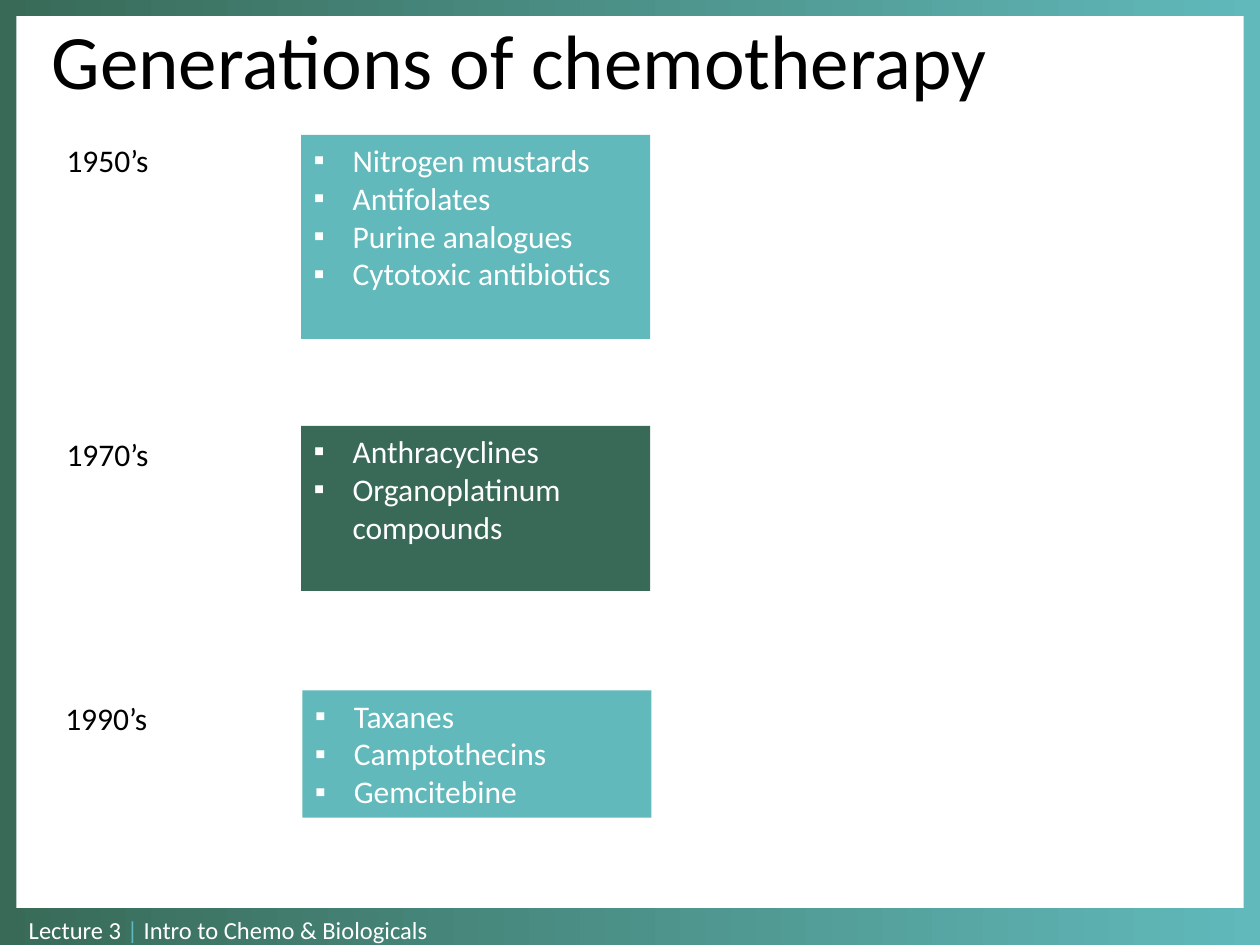
from lxml.etree import SubElement
from pptx import Presentation
from pptx.dml.color import RGBColor
from pptx.enum.shapes import MSO_SHAPE
from pptx.enum.text import MSO_ANCHOR, MSO_AUTO_SIZE, PP_ALIGN
from pptx.oxml.ns import qn
from pptx.util import Inches, Pt

GREEN = RGBColor(0x38, 0x6A, 0x57)
TEAL = RGBColor(0x61, 0xB9, 0xBB)
WHITE = RGBColor(0xFF, 0xFF, 0xFF)
BLACK = RGBColor(0x00, 0x00, 0x00)


def add_rect(left, top, width, height, color=None):
    """Add a borderless rectangle; without a color it fades from green to teal."""
    rect = s.shapes.add_shape(MSO_SHAPE.RECTANGLE, Inches(left), Inches(top),
                              Inches(width), Inches(height))
    rect.shadow.inherit = False
    rect.line.fill.background()
    if color is None:
        rect.fill.gradient()
        rect.fill.gradient_angle = 0
        for stop, position, stop_color in zip(rect.fill.gradient_stops, (0, 1), (GREEN, TEAL)):
            stop.position = position
            stop.color.rgb = stop_color
    else:
        rect.fill.solid()
        rect.fill.fore_color.rgb = color
    return rect


def add_text(p, text, size=18, color=BLACK):
    p.alignment = PP_ALIGN.LEFT
    r = p.add_run()
    r.text = text
    r.font.name = "Calibri"
    r.font.size = Pt(size)
    r.font.color.rgb = color


prs = Presentation()
prs.slide_width = Inches(10)
prs.slide_height = Inches(7.5)
s = prs.slides.add_slide(prs.slide_layouts[5])

# Frame
add_rect(0, 0, 10, 0.13)
add_rect(0, 7.21, 10, 0.29)
add_rect(0, 0.06, 0.13, 7.44, GREEN)
add_rect(9.87, 0.03, 0.13, 7.44, TEAL)

# Footer
footer = s.shapes.add_textbox(Inches(0.13), Inches(7.21), Inches(5.34), Inches(0.34))
footer.text_frame.word_wrap = True
p = footer.text_frame.paragraphs[0]
for text, color in (("Lecture 3 ", WHITE), ("|", TEAL), (" Intro to Chemo & Biologicals", WHITE)):
    add_text(p, text, size=14, color=color)

# Title
title = s.shapes.title
title.left, title.top = Inches(0.31), Inches(0.05)
title.width, title.height = Inches(9.55), Inches(0.84)
tf = title.text_frame
tf.auto_size = MSO_AUTO_SIZE.NONE
tf.vertical_anchor = MSO_ANCHOR.TOP
add_text(tf.paragraphs[0], "Generations of chemotherapy", size=44)

# Decades: label, label left and top, box left, top and height, color, drugs
decades = [
    ("1950’s", 0.43, 1.07, 2.39, 1.07, 1.62, TEAL,
     ["Nitrogen mustards", "Antifolates", "Purine analogues", "Cytotoxic antibiotics"]),
    ("1970’s", 0.43, 3.4, 2.39, 3.38, 1.31, GREEN,
     ["Anthracyclines", "Organoplatinum compounds"]),
    ("1990’s", 0.42, 5.5, 2.4, 5.48, 1.01, TEAL,
     ["Taxanes", "Camptothecins", "Gemcitebine"]),
]
for decade, label_left, label_top, left, top, height, color, drugs in decades:
    label = s.shapes.add_textbox(Inches(label_left), Inches(label_top), Inches(1.96), Inches(0.4))
    label.text_frame.word_wrap = True
    add_text(label.text_frame.paragraphs[0], decade)

    tf = add_rect(left, top, 2.77, height, color).text_frame
    tf.word_wrap = True
    tf.vertical_anchor = MSO_ANCHOR.TOP
    for i, drug in enumerate(drugs):
        p = tf.add_paragraph() if i else tf.paragraphs[0]
        add_text(p, drug, color=WHITE)
        pPr = p._p.get_or_add_pPr()
        pPr.set("marL", str(Inches(0.31)))
        pPr.set("indent", str(Inches(-0.31)))
        SubElement(pPr, qn("a:buFont"), typeface="Arial")
        SubElement(pPr, qn("a:buChar"), char="▪")

prs.save("out.pptx")
